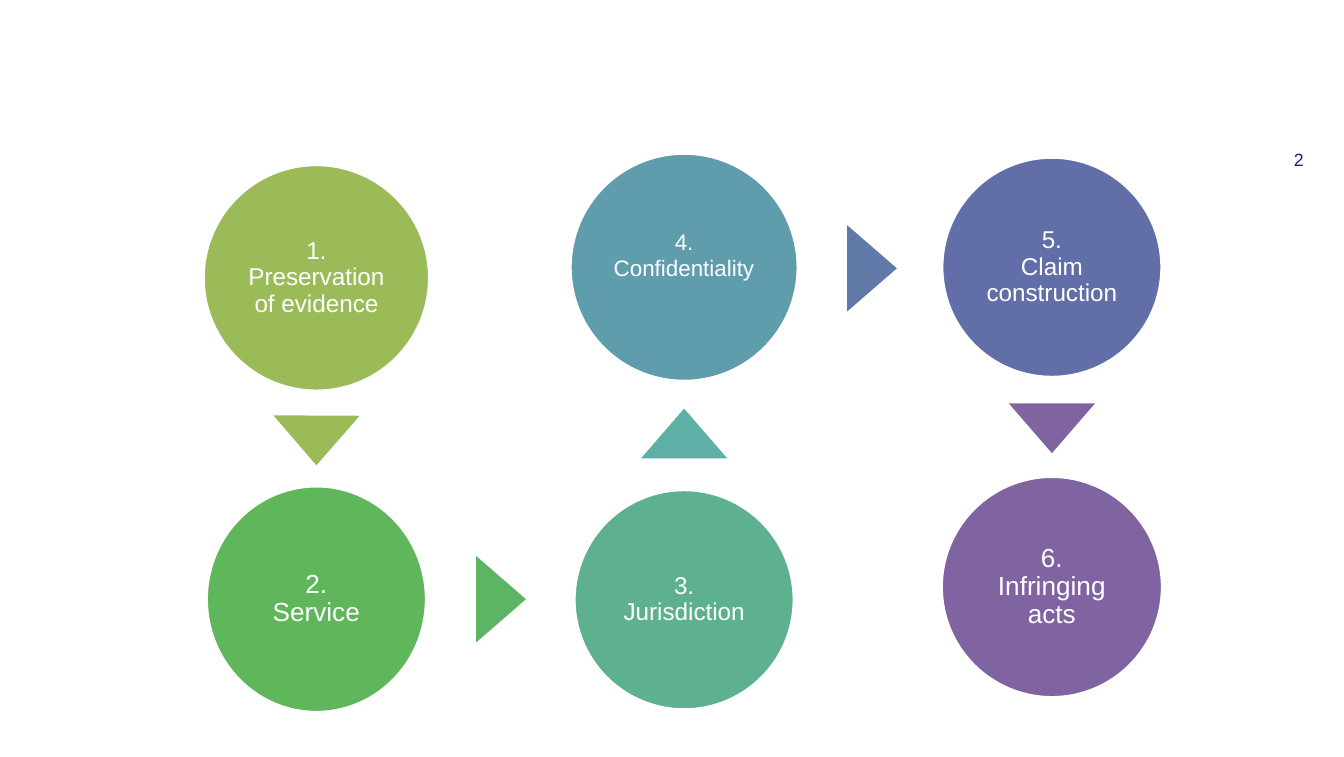
from dataclasses import dataclass

from pptx import Presentation
from pptx.dml.color import RGBColor
from pptx.enum.shapes import MSO_SHAPE as Shape
from pptx.enum.text import MSO_ANCHOR as Anchor, PP_ALIGN as Align
from pptx.util import Cm, Pt


@dataclass(frozen=True)
class Theme:
    """Colours, type and line widths of the slide."""
    font: str = "Arial"
    white: str = "FFFFFF"
    navy: str = "201C80"
    number_size: float = 9.5
    outline: float = 2
    inset: float = 0.05
    line_spacing: float = 0.9


THEME = Theme()
COLUMNS = [5.98 + 6.95 * index for index in range(3)]
ARROW_SIZE = (1.63, 0.94)

# column, centre y, width, height, fill, type size, text
STEPS = [
    (0, 5.25, 4.29, 4.29, "9BBB59", 13, "1. Preservation of evidence"),
    (0, 11.32, 4.17, 4.29, "5FB65B", 14, "2.\vService"),
    (1, 11.33, 4.17, 4.17, "5DB18E", 13, "3.\vJurisdiction"),
    (1, 5.05, 4.32, 4.32, "5F9DAC", 12, "4.\vConfidentiality"),
    (2, 5.05, 4.17, 4.17, "626EA7", 13, "5.\vClaim construction"),
    (2, 11.09, 4.19, 4.19, "8064A2", 14, "6.\vInfringing acts"),
]

# centre x, centre y, rotation, fill
ARROWS = [
    (COLUMNS[0], 8.32, 180.3, "9BBB59"),
    (9.47, 11.32, 90, "5CB565"),
    (COLUMNS[1], 8.19, 0, "5EAFA6"),
    (16.48, 5.07, 90, "6179A8"),
    (COLUMNS[2], 8.09, 180, "8064A2"),
]


def centred(x, y, width, height):
    """Return the box of the given size around a centre point."""
    return x - width / 2, y - height / 2, width, height


def add_figure(page, kind, box, fill):
    """Add a filled preset shape without shadow or outline."""
    figure = page.shapes.add_shape(kind, *map(Cm, box))
    figure.shadow.inherit = False
    figure.fill.solid()
    figure.fill.fore_color.rgb = RGBColor.from_string(fill)
    figure.line.fill.background()
    return figure


def write(frame, text, size, color, align):
    """Write one styled paragraph into a text frame and return it."""
    para = frame.paragraphs[0]
    para.text = text
    para.alignment = align
    para.font.name = THEME.font
    para.font.size = Pt(size)
    para.font.color.rgb = RGBColor.from_string(color)
    return para


def set_insets(frame, inset):
    """Give all four sides of a text frame the same inset."""
    frame.margin_left = frame.margin_right = Cm(inset)
    frame.margin_top = frame.margin_bottom = Cm(inset)


def add_step(page, box, fill, size, text):
    """Add one numbered circle with its label."""
    circle = add_figure(page, Shape.OVAL, box, fill)
    circle.line.color.rgb = RGBColor.from_string(THEME.white)
    circle.line.width = Pt(THEME.outline)
    frame = circle.text_frame
    frame.word_wrap = True
    frame.vertical_anchor = Anchor.MIDDLE
    set_insets(frame, THEME.inset)
    para = write(frame, text, size, THEME.white, Align.CENTER)
    para.line_spacing = THEME.line_spacing
    return circle


def add_arrow(page, box, rotation, fill):
    """Add one triangle pointing to the next step."""
    add_figure(page, Shape.ISOSCELES_TRIANGLE, box, fill).rotation = rotation


def add_page_number(page, box, number):
    """Add the page number at the right edge."""
    frame = page.shapes.add_textbox(*map(Cm, box)).text_frame
    frame.word_wrap = True
    set_insets(frame, 0)
    write(frame, number, THEME.number_size, THEME.navy, Align.RIGHT)


def add_process(page):
    """Add the six steps and the arrows between them."""
    for column, y, width, height, fill, size, text in STEPS:
        box = centred(COLUMNS[column], y, width, height)
        circle = add_step(page, box, fill, size, text)
        if text.startswith("4."):
            circle.text_frame.margin_bottom = Cm(0.53)
            circle.text_frame.paragraphs[0].line_spacing = 1.0
    for x, y, rotation, fill in ARROWS:
        add_arrow(page, centred(x, y, *ARROW_SIZE), rotation, fill)


def main():
    """Build and save the deck."""
    deck = Presentation()
    deck.slide_width, deck.slide_height = Cm(25.4), Cm(14.3)
    page = deck.slides.add_slide(deck.slide_layouts[6])
    add_page_number(page, (23.5, 2.82, 1.14, 0.41), "2")
    add_process(page)
    deck.save("out.pptx")


if __name__ == "__main__":
    main()
